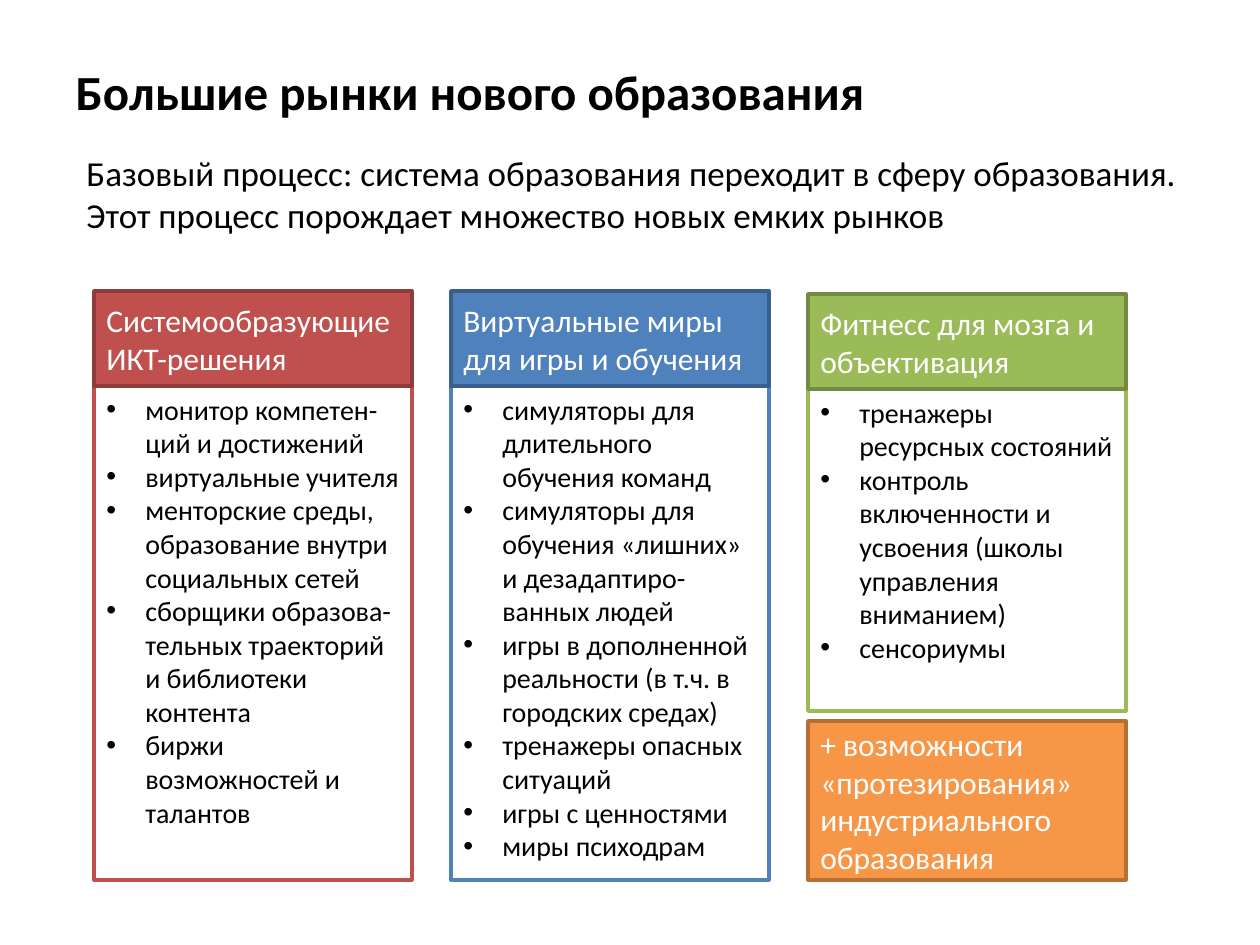
import pptx
import pptx.util
import pptx.dml.color
import pptx.enum.shapes
import pptx.enum.text
from dataclasses import dataclass
from lxml import etree

EMU_PER_PX = 914400 / 126


def px(length):
    return pptx.util.Emu(round(length * EMU_PER_PX))


def rgb(value):
    return pptx.dml.color.RGBColor.from_string(value)


@dataclass(frozen=True)
class Theme:
    font: str = "Calibri"
    title_size: int = 28
    lead_size: int = 20
    header_size: int = 18
    list_size: int = 16
    line_width: int = 2
    indent: int = 39
    dark: str = "000000"
    light: str = "FFFFFF"
    # Each accent is a fill and its darker outline
    red: tuple = ("C0504D", "8E3B39")
    blue: tuple = ("4F81BD", "3A5F8C")
    green: tuple = ("9BBB59", "738A42")
    orange: tuple = ("F79646", "B76F34")


class SlideBuilder:
    def __init__(self, slide, theme):
        self.slide = slide
        self.theme = theme

    def set_text(self, shape, lines, size, color, anchor, wrap=True, bold=False):
        frame = shape.text_frame
        frame.text = "\n".join(lines)
        frame.word_wrap = wrap
        frame.vertical_anchor = anchor
        for paragraph in frame.paragraphs:
            paragraph.alignment = pptx.enum.text.PP_ALIGN.LEFT
            paragraph.font.name = self.theme.font
            paragraph.font.size = pptx.util.Pt(size)
            paragraph.font.bold = bold
            paragraph.font.color.rgb = rgb(color)

    def title(self, text, left, top, width, height):
        shape = self.slide.shapes.title
        shape.left, shape.top = px(left), px(top)
        shape.width, shape.height = px(width), px(height)
        self.set_text(shape, [text], self.theme.title_size, self.theme.dark,
                      pptx.enum.text.MSO_ANCHOR.MIDDLE, wrap=False, bold=True)

    def lead(self, lines, left, top, width, height):
        shape = self.slide.shapes.add_textbox(px(left), px(top), px(width), px(height))
        self.set_text(shape, lines, self.theme.lead_size, self.theme.dark,
                      pptx.enum.text.MSO_ANCHOR.TOP, wrap=False)

    def box(self, left, top, width, height, fill, line):
        shape = self.slide.shapes.add_shape(
            pptx.enum.shapes.MSO_SHAPE.RECTANGLE, px(left), px(top), px(width), px(height))
        shape.shadow.inherit = False
        shape.fill.solid()
        shape.fill.fore_color.rgb = rgb(fill)
        shape.line.color.rgb = rgb(line)
        shape.line.width = pptx.util.Pt(self.theme.line_width)
        return shape

    def banner(self, text, left, top, width, height, accent):
        shape = self.box(left, top, width, height, *accent)
        self.set_text(shape, [text], self.theme.header_size, self.theme.light,
                      pptx.enum.text.MSO_ANCHOR.MIDDLE)

    def bullet_box(self, items, left, top, width, height, accent):
        shape = self.box(left, top, width, height, self.theme.light, accent[0])
        self.set_text(shape, items, self.theme.list_size, self.theme.dark,
                      pptx.enum.text.MSO_ANCHOR.TOP)
        for paragraph in shape.text_frame.paragraphs:
            properties = paragraph._p.get_or_add_pPr()
            properties.set("marL", str(px(self.theme.indent)))
            properties.set("indent", str(-px(self.theme.indent)))
            namespace = properties.nsmap["a"]
            font = etree.Element(f"{{{namespace}}}buFont", typeface="Arial")
            bullet = etree.Element(f"{{{namespace}}}buChar", char="•")
            # Bullet elements come before the default run properties
            properties.insert(0, font)
            properties.insert(1, bullet)


def main():
    theme = Theme()
    presentation = pptx.Presentation()
    presentation.slide_width = px(1260)
    presentation.slide_height = px(945)
    slide = presentation.slides.add_slide(presentation.slide_layouts[5])
    builder = SlideBuilder(slide, theme)

    # Title and introduction
    builder.title("Большие рынки нового образования", 63, 55, 822, 72)
    builder.lead(["Базовый процесс: система образования переходит в сферу образования.",
                  "Этот процесс порождает множество новых емких рынков"], 74, 145, 1115, 97)

    # Market columns: heading, accent, top, bottom, items
    columns = [
        ("Системообразующие ИКТ-решения", theme.red, 291, 880, [
            "монитор компетен-ций и достижений",
            "виртуальные учителя",
            "менторские среды, образование внутри социальных сетей",
            "сборщики образова-тельных траекторий и библиотеки контента",
            "биржи возможностей и талантов"]),
        ("Виртуальные миры для игры и обучения", theme.blue, 291, 880, [
            "симуляторы для длительного обучения команд",
            "симуляторы для обучения «лишних» и дезадаптиро-ванных людей",
            "игры в дополненной реальности (в т.ч. в городских средах)",
            "тренажеры опасных ситуаций",
            "игры с ценностями",
            "миры психодрам"]),
        ("Фитнесс для мозга и объективация", theme.green, 294, 711, [
            "тренажеры ресурсных состояний",
            "контроль включенности и усвоения (школы управления вниманием)",
            "сенсориумы"]),
    ]
    first_left, pitch, width, header_height = 94, 357, 318, 95
    for index, (heading, accent, top, bottom, items) in enumerate(columns):
        left = first_left + index * pitch
        body_top = top + header_height
        builder.bullet_box(items, left, body_top, width, bottom - body_top, accent)
        builder.banner(heading, left, top, width, header_height, accent)

    # Extra opportunity under the last column
    builder.banner("+ возможности «протезирования» индустриального образования",
                   first_left + 2 * pitch, 721, width, 159, theme.orange)

    presentation.save("out.pptx")


if __name__ == "__main__":
    main()
